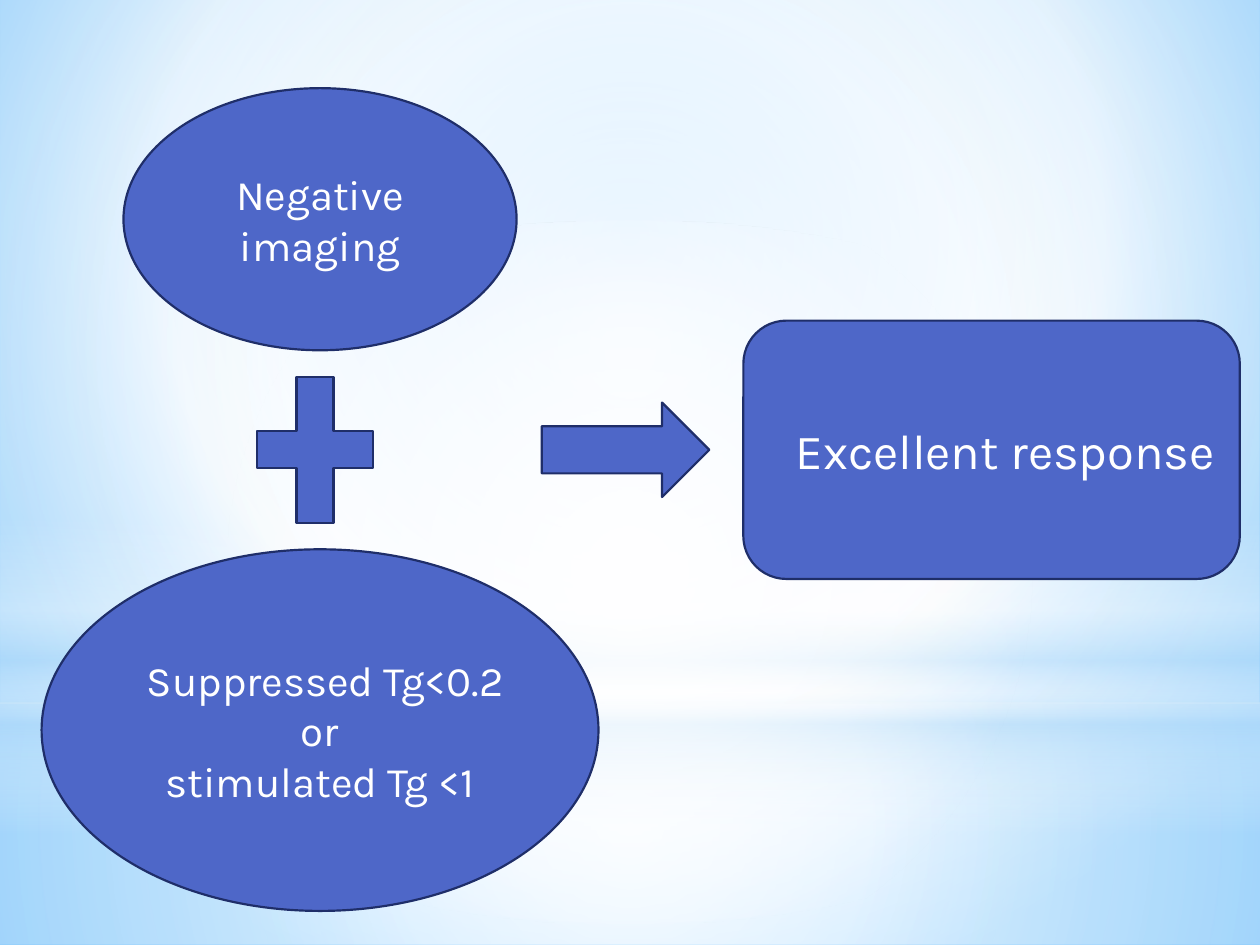
from lxml import etree
from pptx import Presentation
from pptx.dml.color import RGBColor
from pptx.enum.shapes import MSO_SHAPE
from pptx.enum.text import MSO_ANCHOR, PP_ALIGN
from pptx.oxml.ns import qn
from pptx.util import Inches, Pt

RECT, OVAL = MSO_SHAPE.RECTANGLE, MSO_SHAPE.OVAL
ROUND, PLUS = MSO_SHAPE.ROUNDED_RECTANGLE, MSO_SHAPE.MATH_PLUS
ARROW = MSO_SHAPE.RIGHT_ARROW
CENTER, RIGHT = PP_ALIGN.CENTER, PP_ALIGN.RIGHT
MIDDLE = MSO_ANCHOR.MIDDLE

BLUE = RGBColor(0x4E, 0x67, 0xC8)
NAVY = RGBColor(0x1F, 0x2E, 0x69)
WHITE = RGBColor(0xFF, 0xFF, 0xFF)
PALE = RGBColor(0xB4, 0xDC, 0xFA)
SKY = RGBColor(0x9E, 0xD5, 0xFF)
DEEP = RGBColor(0x5B, 0xB9, 0xFF)

FONT = "Karla"
COLS, ROWS = 100, 75
CELL = Inches(10) / COLS
MID = (50, 50, 50, 50)


def shade(props, stops, focus=None):
    """Swap the solid fill in props for a gradient; no focus means top to bottom."""
    grad = etree.Element(qn("a:gradFill"), rotWithShape="1")
    group = etree.SubElement(grad, qn("a:gsLst"))
    for pos, color, alpha in stops:
        stop = etree.SubElement(group, qn("a:gs"), pos=str(pos * 1000))
        tint = etree.SubElement(stop, qn("a:srgbClr"), val=str(color))
        if alpha < 100:
            etree.SubElement(tint, qn("a:alpha"), val=str(alpha * 1000))
    if focus:
        way = etree.SubElement(grad, qn("a:path"), path="circle")
        rect = etree.SubElement(way, qn("a:fillToRect"))
        for side, share in zip("ltrb", focus):
            rect.set(side, str(share * 1000))
    else:
        etree.SubElement(grad, qn("a:lin"), ang="5400000", scaled="0")
    props.replace(props.find(qn("a:solidFill")), grad)


def place(slide, kind, col, row, wide, high):
    """Add a plain shape, placed by grid cells."""
    box = [round(n * CELL) for n in (col, row, wide, high)]
    shape = slide.shapes.add_shape(kind, *box)
    shape.shadow.inherit = False
    shape.fill.solid()
    return shape


def glow(slide, kind, row, high, stops, focus=None):
    """Add a full-width gradient band without an outline."""
    band = place(slide, kind, 0, row, COLS, high)
    band.line.fill.background()
    shade(band._element.spPr, stops, focus)


def node(slide, kind, mid_col, mid_row, wide, high, lines=(), size=24, align=CENTER):
    """Add an outlined blue shape around a centre point, with optional text."""
    shape = place(slide, kind, mid_col - wide / 2, mid_row - high / 2, wide, high)
    shape.fill.fore_color.rgb = BLUE
    shape.line.color.rgb = NAVY
    shape.line.width = Pt(1.25)
    frame = shape.text_frame
    frame.word_wrap = True
    frame.vertical_anchor = MIDDLE
    for i, line in enumerate(lines):
        para = frame.add_paragraph() if i else frame.paragraphs[0]
        para.alignment = align
        para._p.get_or_add_pPr().set("rtl", "1")
        run = para.add_run()
        run.text = line
        run.font.name = FONT
        run.font.size = Pt(size)
        run.font.color.rgb = WHITE


def backdrop(slide):
    slide.background.fill.solid()
    shade(slide._element.find(".//" + qn("p:bgPr")),
          [(0, SKY, 100), (60, WHITE, 100), (100, DEEP, 100)], (20, 10, 20, 60))
    # Floor and wall meet at one row
    edge = 55.8
    glow(slide, RECT, edge, ROWS - edge,
         [(0, WHITE, 91), (37, WHITE, 76), (100, PALE, 79)], MID)
    glow(slide, RECT, 0, edge,
         [(0, WHITE, 89), (48, WHITE, 62), (100, PALE, 79)], MID)
    # Horizon streaks and central light
    glow(slide, RECT, 41.2, 25,
         [(0, WHITE, 0), (29, WHITE, 30), (45, PALE, 40),
          (55, WHITE, 26), (65, PALE, 60), (100, WHITE, 0)])
    glow(slide, OVAL, 17.5, edge, [(0, WHITE, 100), (56, WHITE, 0)], MID)


def main():
    deck = Presentation()
    deck.slide_width = round(COLS * CELL)
    deck.slide_height = round(ROWS * CELL)
    slide = deck.slides.add_slide(deck.slide_layouts[6])
    backdrop(slide)

    # Two conditions, stacked on one axis
    axis, level = 25.4, 35.7
    node(slide, OVAL, axis, 17.4, 31.2, 20.8, ["Negative imaging"])
    node(slide, OVAL, axis, 57.95, 44.2, 28.7,
         ["Suppressed Tg<0.2 ", "or", "stimulated Tg <1"])

    # Plus, arrow and result, on one level
    node(slide, PLUS, 25, level, 12.5, 15.8)
    node(slide, ARROW, 49.65, level, 13.3, 7.5)
    node(slide, ROUND, 78.7, level, 39.4, 20.5, ["Excellent response"], 28, RIGHT)

    deck.save("out.pptx")


if __name__ == "__main__":
    main()
